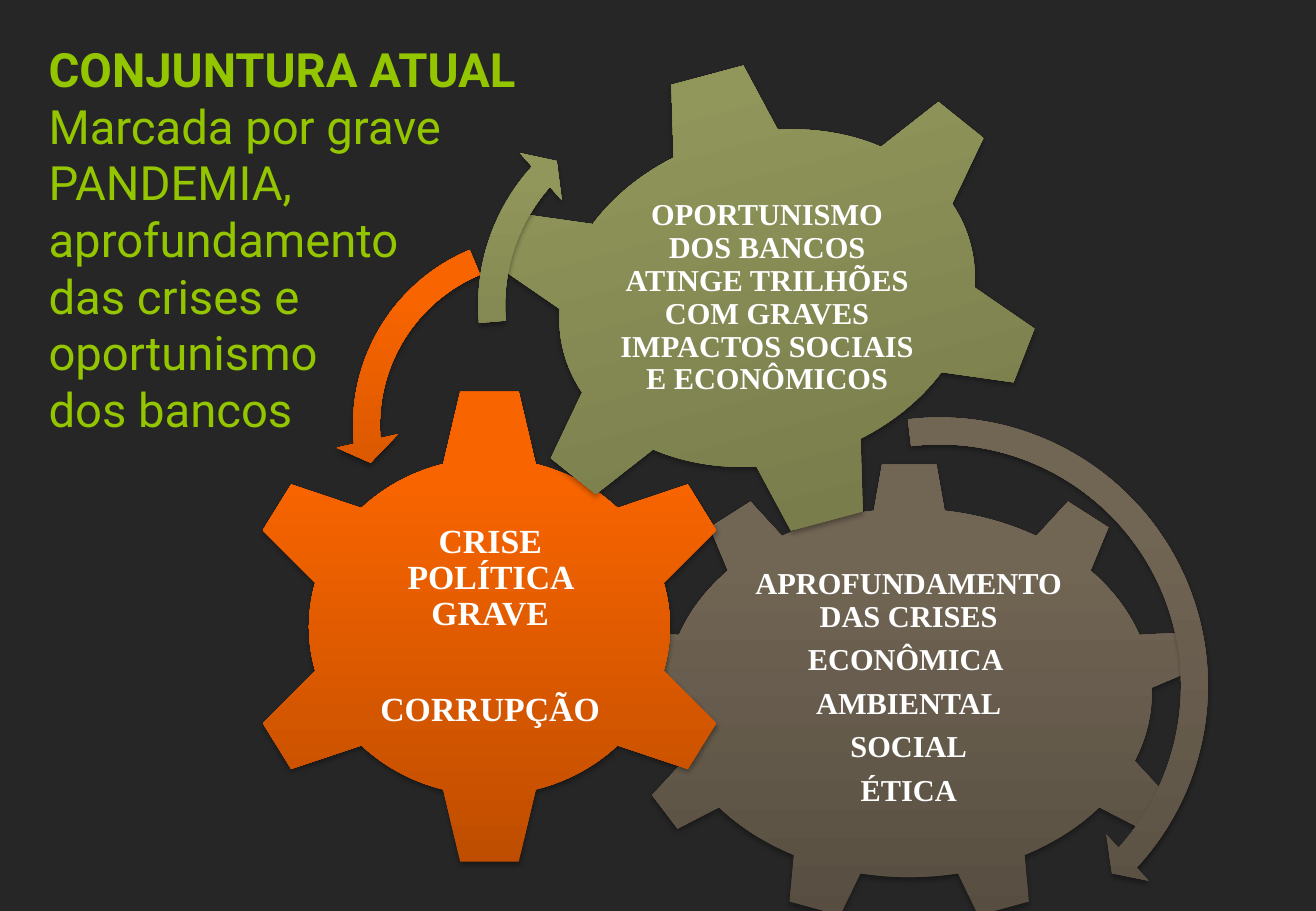
from pptx import Presentation
from pptx.dml.color import RGBColor
from pptx.enum.shapes import MSO_SHAPE as Shape
from pptx.enum.text import MSO_ANCHOR as Anchor, MSO_AUTO_SIZE as AutoSize, PP_ALIGN as Align
from pptx.oxml import parse_xml
from pptx.oxml.ns import nsdecls, qn
from pptx.util import Pt

COLORS = {"background": "262626", "title": "94C600", "label": "FFFFFF", "shadow": "000000"}
GRADIENTS = {
    "brown": ("574E41", "716554", "726654"),
    "orange": ("BE4D00", "F76400", "F86400"),
    "olive": ("707446", "91965B", "93985A"),
}


def write_text(frame, paragraphs, size, font, color, align=Align.CENTER, anchor=Anchor.MIDDLE,
               bold=(True,), spacing=1.0, gap=0, margins=(2, 2)):
    """Fill a text frame; the last entry of bold holds for all later paragraphs."""
    frame.word_wrap = True
    frame.auto_size = AutoSize.NONE
    frame.vertical_anchor = anchor
    frame.margin_left = frame.margin_right = Pt(margins[0])
    frame.margin_top = frame.margin_bottom = Pt(margins[1])
    for index, text in enumerate(paragraphs):
        paragraph = frame.add_paragraph() if index else frame.paragraphs[0]
        paragraph.alignment = align
        paragraph.line_spacing = spacing
        paragraph.space_before = Pt(gap if index else 0)
        run = paragraph.add_run()
        run.text = text
        run.font.size = Pt(size)
        run.font.name = font
        run.font.bold = bold[min(index, len(bold) - 1)]
        run.font.color.rgb = RGBColor.from_string(COLORS[color])


def add_part(slide, kind, box, tone, rotation=0, percents=()):
    """Add a gear or a circular arrow with its gradient and soft shadow."""
    part = slide.shapes.add_shape(kind, *map(Pt, box))
    part.rotation = rotation
    for index, percent in enumerate(percents):
        part.adjustments[index] = percent / 100
    stops = "".join(
        f'<a:gs pos="{position}000"><a:srgbClr val="{color}"/></a:gs>'
        for position, color in zip((0, 80, 100), GRADIENTS[tone]))
    properties = part._element.spPr
    properties.append(parse_xml(
        f'<a:gradFill {nsdecls("a")} rotWithShape="1"><a:gsLst>{stops}</a:gsLst>'
        f'<a:lin ang="{270 * 60000}" scaled="0"/></a:gradFill>'))
    part.line.fill.background()
    part.shadow.inherit = False
    properties.find(qn("a:effectLst")).append(parse_xml(
        f'<a:outerShdw {nsdecls("a")} blurRad="{Pt(3.1)}" dist="{Pt(1.8)}" '
        f'dir="{90 * 60000}" rotWithShape="0"><a:srgbClr val="{COLORS["shadow"]}">'
        f'<a:alpha val="35000"/></a:srgbClr></a:outerShdw>'))


def add_label(slide, box, paragraphs, size, gap=0):
    """Add the white caption of a gear."""
    label = slide.shapes.add_textbox(*map(Pt, box))
    write_text(label.text_frame, paragraphs, size, "Times New Roman", "label",
               spacing=0.9, gap=gap)


def add_title(slide, box, paragraphs):
    """Place the title with its first line in bold."""
    title = slide.shapes.title
    title.left, title.top, title.width, title.height = map(Pt, box)
    write_text(title.text_frame, paragraphs, 28, "Roboto", "title", align=Align.LEFT,
               anchor=Anchor.TOP, bold=(True, False), margins=(7.2, 3.6))


def main():
    """Build the slide of three interlocking crises."""
    deck = Presentation()
    deck.slide_width, deck.slide_height = Pt(780), Pt(540)
    slide = deck.slides.add_slide(deck.slide_layouts[5])
    slide.background.fill.solid()
    slide.background.fill.fore_color.rgb = RGBColor.from_string(COLORS["background"])

    add_title(slide, (21.6, 20.2, 368.6, 244.8), (
        "CONJUNTURA ATUAL", "Marcada por grave PANDEMIA, aprofundamento",
        "das crises e", "oportunismo", "dos bancos"))

    add_part(slide, Shape.GEAR_9, (367.9, 274.3, 342, 272.9), "brown")
    add_label(slide, (431.3, 337.7, 214.6, 140.4), (
        "APROFUNDAMENTO DAS CRISES", "ECONÔMICA ", "AMBIENTAL", "SOCIAL", "ÉTICA"), 18, gap=6.3)

    add_part(slide, Shape.GEAR_6, (140.4, 229, 299.5, 285.1), "orange")
    add_label(slide, (214.6, 301, 151.9, 140.4), ("CRISE POLÍTICA GRAVE", "CORRUPÇÃO"), 20, gap=35)

    add_part(slide, Shape.GEAR_6, (288, 36.7, 333.4, 280.1), "olive", rotation=345)
    add_label(slide, (364.3, 95, 180.7, 163.4), (
        "OPORTUNISMO DOS BANCOS ATINGE TRILHÕES COM GRAVES IMPACTOS SOCIAIS E ECONÔMICOS",), 18)

    add_part(slide, Shape.CIRCULAR_ARROW, (387.4, 236.9, 339.1, 339.1), "brown",
             percents=(4.69, 299, 2548.7, 15792.8, 5.47))
    add_part(slide, Shape.LEFT_CIRCULAR_ARROW, (198.7, 128.9, 246.2, 246.2), "orange",
             percents=(6.45, 430, 10489.1, 14837.8, 7.53))
    add_part(slide, Shape.CIRCULAR_ARROW, (272.9, 48.2, 265.7, 265.7), "olive",
             percents=(5.98, 394.1, 13313.8, 10508.2, 6.98))

    deck.save("out.pptx")


if __name__ == "__main__":
    main()
